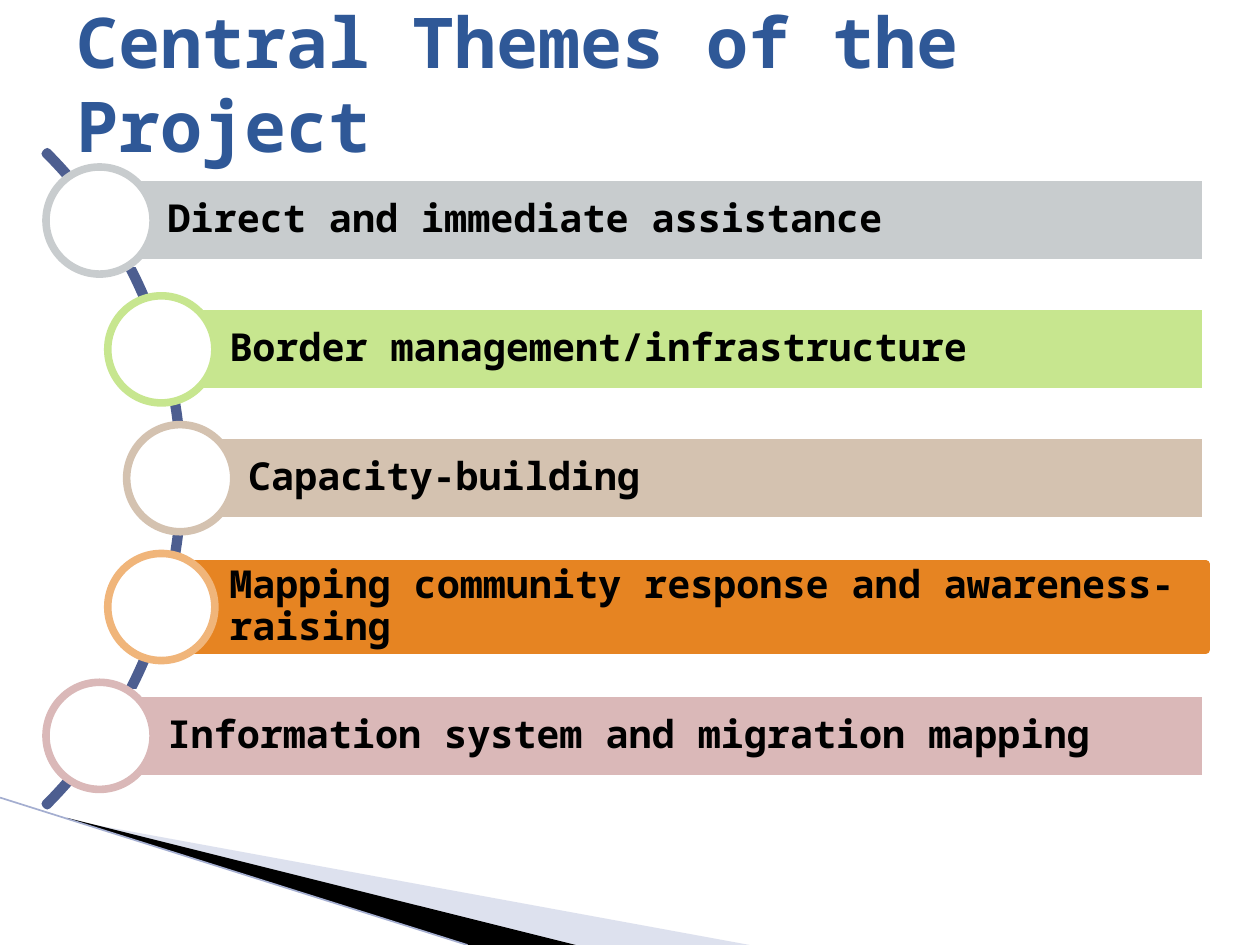
from lxml import etree
from pptx import Presentation
from pptx.dml.color import RGBColor
from pptx.enum.shapes import MSO_CONNECTOR, MSO_SHAPE
from pptx.enum.text import MSO_ANCHOR, MSO_AUTO_SIZE, PP_ALIGN
from pptx.oxml.ns import qn
from pptx.util import Inches, Pt

RECT, OVAL, ARC = MSO_SHAPE.RECTANGLE, MSO_SHAPE.OVAL, MSO_SHAPE.BLOCK_ARC
STRAIGHT = MSO_CONNECTOR.STRAIGHT
MIDDLE, LEFT = MSO_ANCHOR.MIDDLE, PP_ALIGN.LEFT

WHITE = RGBColor(0xFF, 0xFF, 0xFF)
BLACK = RGBColor(0x00, 0x00, 0x00)
BLUE = RGBColor(0x2F, 0x58, 0x97)
NAVY = RGBColor(0x4D, 0x5E, 0x90)
PALE = RGBColor(0xAC, 0xB4, 0xD5)
EDGE = RGBColor(0xA4, 0xAE, 0xD0)
GREY = RGBColor(0xC8, 0xCC, 0xCE)
LIME = RGBColor(0xC7, 0xE6, 0x8F)
TAN = RGBColor(0xD4, 0xC2, 0xB0)
ORANGE = RGBColor(0xE6, 0x84, 0x22)
PEACH = RGBColor(0xF0, 0xB5, 0x7A)
ROSE = RGBColor(0xDA, 0xB8, 0xB8)

FONT = "Noto Sans Mono"
TITLE = "Central Themes of the Project"
# wording, bar left, bar fill, bar line, ring colour
THEMES = [
    ("Direct and immediate assistance", 0.79, GREY, WHITE, GREY),
    ("Border management/infrastructure", 1.28, LIME, WHITE, LIME),
    ("Capacity-building", 1.43, TAN, WHITE, TAN),
    ("Mapping community response and awareness-raising", 1.28, ORANGE, ORANGE, PEACH),
    ("Information system and migration mapping", 0.79, ROSE, WHITE, ROSE),
]
# points, fill, opacity in percent
WEDGES = [
    ([(0.55, 6.51), (5.95, 7.5), (4.56, 7.5), (0.55, 6.5)], PALE, 40),
    ([(0.53, 6.49), (4.57, 7.5), (3.72, 7.5), (0.54, 6.5)], BLACK, 100),
]
TOP, STEP, RIGHT = 1.41, 1.0225, 9.57
BAR, RING = 0.68, 0.85
STROKE = Pt(4.33)

prs = Presentation()
prs.slide_width, prs.slide_height = Inches(10), Inches(7.5)
slide = prs.slides.add_slide(prs.slide_layouts[5])
shapes = slide.shapes


def paint(shape, fill, line):
    shape.shadow.inherit = False
    shape.fill.solid()
    shape.fill.fore_color.rgb = fill
    if line is None:
        shape.line.fill.background()
    else:
        shape.line.color.rgb = line
        shape.line.width = STROKE


def add(kind, left, top, wide, high, fill, line):
    shape = shapes.add_shape(kind, *map(Inches, (left, top, wide, high)))
    paint(shape, fill, line)
    return shape


def write(frame, text, size, color):
    frame.word_wrap = True
    frame.auto_size = MSO_AUTO_SIZE.NONE
    frame.vertical_anchor = MIDDLE
    para = frame.paragraphs[0]
    para.alignment = LEFT
    run = para.add_run()
    run.text = text
    font = run.font
    font.name, font.size, font.bold = FONT, Pt(size), True
    font.color.rgb = color
    return para


for points, color, alpha in WEDGES:
    spots = [(Inches(x), Inches(y)) for x, y in points]
    pen = shapes.build_freeform(*spots[0])
    pen.add_line_segments(spots[1:], close=True)
    wedge = pen.convert_to_shape()
    paint(wedge, color, None)
    if alpha < 100:
        tint = wedge.fill._xPr.find(qn("a:solidFill"))[0]
        etree.SubElement(tint, qn("a:alpha")).set("val", str(alpha * 1000))

edge = shapes.add_connector(STRAIGHT, Inches(0), Inches(6.33), Inches(3.71), Inches(7.5))
edge.line.color.rgb = EDGE
edge.line.width = Pt(0.95)
etree.SubElement(edge._element.spPr, qn("a:effectLst"))

title = shapes.title
title.left, title.top = Inches(0.51), Inches(0.03)
title.width, title.height = Inches(9), Inches(1.25)
write(title.text_frame, TITLE, 40, BLUE)

# Adjustments: start angle, end angle, thickness
arc = add(ARC, -5.89, 0.13, 7.34, 7.34, NAVY, NAVY)
for i, value in enumerate((189, 27, 0.003)):
    arc.adjustments[i] = value

for i, (text, left, fill, line, rim) in enumerate(THEMES):
    top = TOP + i * STEP
    bar = add(RECT, left, top, RIGHT - left, BAR, fill, line)
    frame = bar.text_frame
    frame.margin_left = Inches(0.54)
    frame.margin_top = frame.margin_right = frame.margin_bottom = Inches(0.06)
    write(frame, text, 22, BLACK).line_spacing = 0.9
    add(OVAL, left - RING / 2, top + (BAR - RING) / 2, RING, RING, WHITE, rim)

prs.save("out.pptx")
